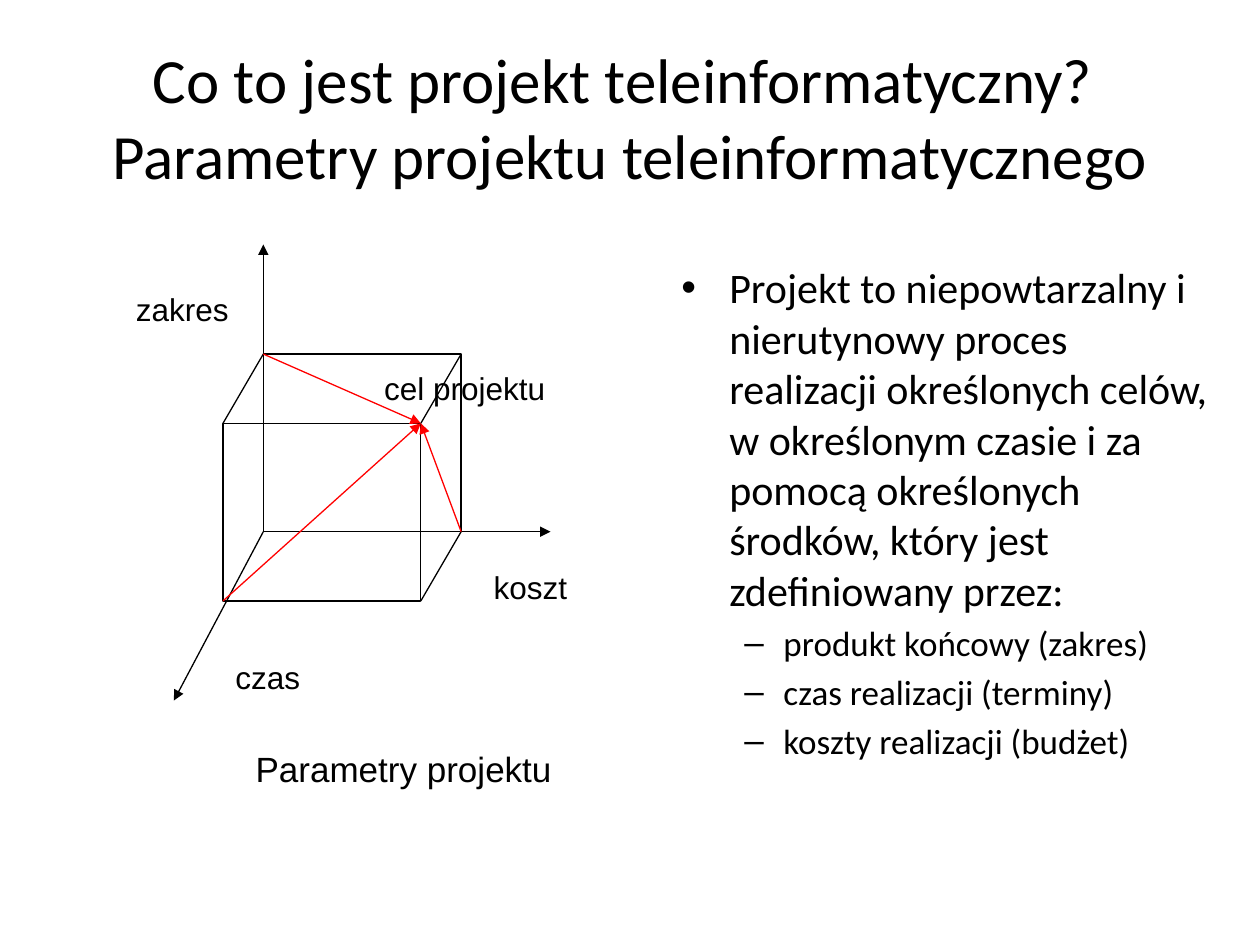
from dataclasses import dataclass

from lxml.etree import SubElement
from pptx import Presentation
from pptx.dml.color import RGBColor
from pptx.enum.shapes import MSO_CONNECTOR as Connector, MSO_SHAPE as Shape
from pptx.enum.text import MSO_ANCHOR as Anchor, PP_ALIGN as Align
from pptx.oxml.ns import qn
from pptx.util import Inches, Pt


@dataclass(frozen=True)
class Theme:
    ink: RGBColor = RGBColor(0, 0, 0)
    goal: RGBColor = RGBColor(255, 0, 0)
    heading_font: str = "Calibri"
    label_font: str = "Arial"
    title: int = 36
    body: int = 24
    sub: int = 20
    label: int = 18
    line: float = 0.75


theme = Theme()
prs = Presentation()
prs.slide_width, prs.slide_height = Inches(10), Inches(7.5)
slide = prs.slides.add_slide(prs.slide_layouts[6])


def write(paragraph, text, *, size, font=theme.heading_font, align=Align.LEFT,
          before=0, bullet=None, margin=0, hanging=0, level=0):
    paragraph.alignment = align
    paragraph.space_before = Pt(before)
    paragraph.level = level
    for number, line in enumerate(text.split("\n")):
        if number:
            paragraph.add_line_break()
        run = paragraph.add_run()
        run.text = line
        run.font.size = Pt(size)
        run.font.name = font
        run.font.color.rgb = theme.ink
    if bullet:
        props = paragraph._p.get_or_add_pPr()
        props.set("marL", str(Inches(margin)))
        props.set("indent", str(-Inches(hanging)))
        SubElement(props, qn("a:buFont"), typeface=theme.label_font)
        SubElement(props, qn("a:buChar"), char=bullet)


def connect(start, end, color=theme.ink, arrow=False):
    line = slide.shapes.add_connector(
        Connector.STRAIGHT, *(Inches(value) for value in (*start, *end)))
    line.line.color.rgb = color
    line.line.width = Pt(theme.line)
    if arrow:
        SubElement(line.line._get_or_add_ln(), qn("a:tailEnd"), type="triangle")
    SubElement(line._element.spPr, qn("a:effectLst"))


# Title
title = slide.shapes.add_textbox(
    Inches(0.5), Inches(0.3), Inches(9), Inches(1.25)).text_frame
title.word_wrap = True
title.vertical_anchor = Anchor.MIDDLE
write(title.paragraphs[0],
      "Co to jest projekt teleinformatyczny? \nParametry projektu teleinformatycznego",
      size=theme.title, align=Align.CENTER)

# Definition with its three parameters
definition = slide.shapes.add_textbox(
    Inches(5.31), Inches(2.03), Inches(4.42), Inches(4.95)).text_frame
definition.word_wrap = True
write(definition.paragraphs[0],
      "Projekt to niepowtarzalny i nierutynowy proces realizacji określonych celów, "
      "w określonym czasie i za pomocą określonych środków, który jest "
      "zdefiniowany przez:",
      size=theme.body, bullet="•", margin=0.38, hanging=0.38)
for parameter in ("produkt końcowy (zakres)", "czas realizacji (terminy)",
                  "koszty realizacji (budżet)"):
    write(definition.add_paragraph(), parameter, size=theme.sub,
          before=theme.sub * 0.2, bullet="–", margin=0.81, hanging=0.31, level=1)

# Axes
origin = x0, y0 = 2.09, 4.22
for axis_end in ((x0, 1.94), (4.37, y0), (1.38, 5.56)):
    connect(origin, axis_end, arrow=True)

# Cube: back and front faces
width, height = 1.57, 1.41
depth_x, depth_y = -0.32, 0.55
top, right = y0 - height, x0 + width
for dx, dy in ((0, 0), (depth_x, depth_y)):
    face = slide.shapes.add_shape(Shape.RECTANGLE, Inches(x0 + dx), Inches(top + dy),
                                  Inches(width), Inches(height))
    face.shadow.inherit = False
    face.fill.background()
    face.line.color.rgb = theme.ink
    face.line.width = Pt(theme.line)

# Cube: depth edges
for x, y in ((x0, top), (right, top), (right, y0)):
    connect((x + depth_x, y + depth_y), (x, y))

# Arrows from each axis to the project goal
goal = right + depth_x, top + depth_y
for value in ((x0 + depth_x, y0 + depth_y), (x0, top), (right, y0)):
    connect(value, goal, theme.goal, arrow=True)

# Labels and caption
for text, left, label_top, label_width, size in (
        ("koszt", 3.82, 4.46, 1.1, theme.label),
        ("zakres", 0.98, 2.25, 0.94, theme.label),
        ("czas", 1.77, 5.17, 0.79, theme.label),
        ("cel projektu", 2.95, 2.88, 1.65, theme.label),
        ("Parametry projektu", 1.93, 5.88, 2.99, theme.sub)):
    label = slide.shapes.add_textbox(
        Inches(left), Inches(label_top), Inches(label_width), Inches(0.4)).text_frame
    label.word_wrap = True
    write(label.paragraphs[0], text, size=size, font=theme.label_font)

prs.save("out.pptx")
